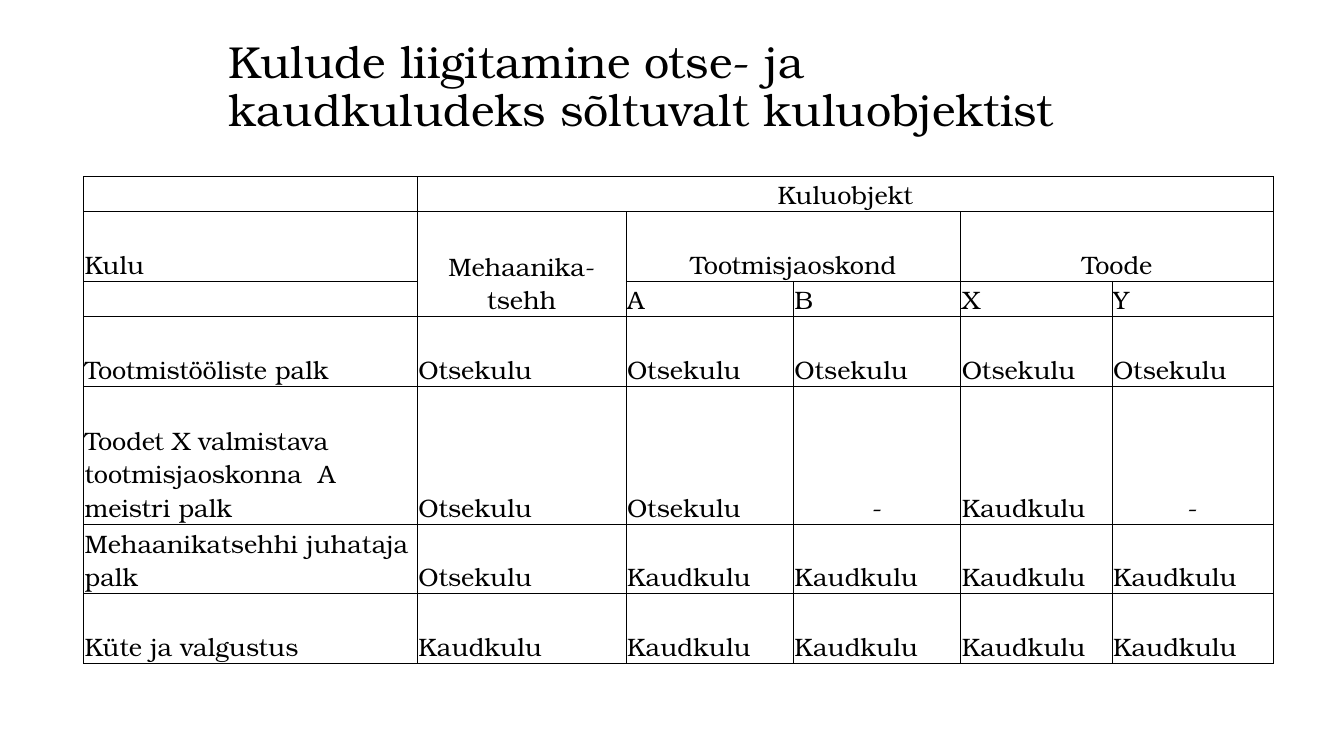
from dataclasses import dataclass

from lxml.etree import SubElement
from pptx import Presentation
from pptx.dml.color import RGBColor
from pptx.enum.text import MSO_ANCHOR, MSO_AUTO_SIZE, PP_ALIGN
from pptx.oxml.ns import qn
from pptx.util import Pt

PX = 9144


@dataclass(frozen=True)
class Theme:
    """Colours, font and type sizes of the slide."""
    font: str = "TeX Gyre Bonum"
    ink: str = "000000"
    paper: str = "FFFFFF"
    title_size: int = 32
    cell_size: int = 18
    border_width: float = 0.5


THEME = Theme()
TITLE = "Kulude liigitamine otse- ja kaudkuludeks sõltuvalt kuluobjektist"
TITLE_BOX = (217, 25, 900, 125)
TABLE_BOX = (83, 175, 1180, 483)
COLUMN_WIDTHS = (331, 207, 166, 166, 150, 160)
ROW_HEIGHTS = (35, 69, 35, 69, 137, 69, 69)
DIRECT, INDIRECT, NONE = "Otsekulu", "Kaudkulu", "-"
COST_ROWS = [
    ["", "Kuluobjekt", "", "", "", ""],
    ["Kulu", "Mehaanika-tsehh", "Tootmisjaoskond", "", "Toode", ""],
    ["", "", "A", "B", "X", "Y"],
    ["Tootmistööliste palk"] + [DIRECT] * 5,
    ["Toodet X valmistava tootmisjaoskonna  A meistri palk",
     DIRECT, DIRECT, NONE, INDIRECT, NONE],
    ["Mehaanikatsehhi juhataja palk", DIRECT] + [INDIRECT] * 4,
    ["Küte ja valgustus"] + [INDIRECT] * 5,
]
HEADER_MERGES = [((0, 1), (0, 5)), ((1, 1), (2, 1)), ((1, 2), (1, 3)), ((1, 4), (1, 5))]


def style_paragraph(paragraph, size, alignment):
    """Give a paragraph the theme font, a size and an alignment."""
    paragraph.alignment = alignment
    paragraph.font.name = THEME.font
    paragraph.font.size = Pt(size)
    paragraph.font.color.rgb = RGBColor.from_string(THEME.ink)


def add_borders(cell):
    """Draw a thin line on all four sides of a cell."""
    properties = cell._tc.get_or_add_tcPr()
    for side in ("a:lnL", "a:lnR", "a:lnT", "a:lnB"):
        line = SubElement(properties, qn(side), w=str(Pt(THEME.border_width)))
        fill = SubElement(line, qn("a:solidFill"))
        SubElement(fill, qn("a:srgbClr"), val=THEME.ink)


def format_cell(cell, text):
    """Fill in one cell and set its borders, margins and text style."""
    add_borders(cell)
    cell.fill.solid()
    cell.fill.fore_color.rgb = RGBColor.from_string(THEME.paper)
    cell.margin_left = cell.margin_right = cell.margin_top = PX
    cell.margin_bottom = 0
    cell.vertical_anchor = MSO_ANCHOR.BOTTOM
    cell.text = text
    centred = cell.is_merge_origin or text == NONE
    alignment = PP_ALIGN.CENTER if centred else PP_ALIGN.LEFT
    style_paragraph(cell.text_frame.paragraphs[0], THEME.cell_size, alignment)


def place_title(slide, box):
    """Move the title placeholder to the box and fill it."""
    title = slide.shapes.title
    title.left, title.top, title.width, title.height = (length * PX for length in box)
    frame = title.text_frame
    frame.text = TITLE
    frame.word_wrap = True
    frame.auto_size = MSO_AUTO_SIZE.NONE
    frame.vertical_anchor = MSO_ANCHOR.MIDDLE
    paragraph = frame.paragraphs[0]
    paragraph.line_spacing = 0.9
    style_paragraph(paragraph, THEME.title_size, PP_ALIGN.LEFT)


def place_cost_table(slide, box):
    """Add the table of direct and indirect costs in the box."""
    table = slide.shapes.add_table(
        len(ROW_HEIGHTS), len(COLUMN_WIDTHS), *(length * PX for length in box)).table
    table.first_row = table.horz_banding = False
    for column, width in zip(table.columns, COLUMN_WIDTHS):
        column.width = width * PX
    for row, height in zip(table.rows, ROW_HEIGHTS):
        row.height = height * PX
    for first, last in HEADER_MERGES:
        table.cell(*first).merge(table.cell(*last))
    for row, texts in zip(table.rows, COST_ROWS):
        for cell, text in zip(row.cells, texts):
            format_cell(cell, text)


def main():
    """Build the slide and save it."""
    presentation = Presentation()
    presentation.slide_width = 1333 * PX
    presentation.slide_height = 750 * PX
    slide = presentation.slides.add_slide(presentation.slide_layouts.get_by_name("Title Only"))
    place_title(slide, TITLE_BOX)
    place_cost_table(slide, TABLE_BOX)
    presentation.save("out.pptx")


if __name__ == "__main__":
    main()
